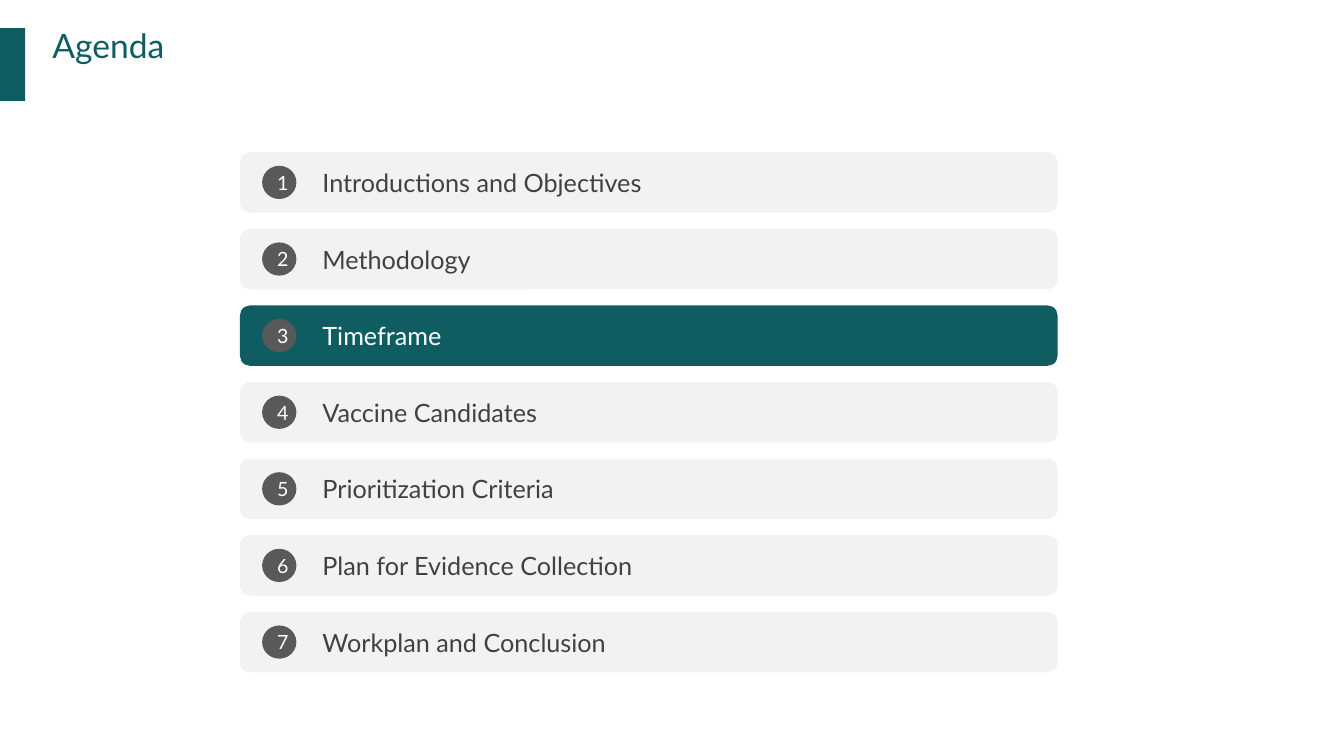
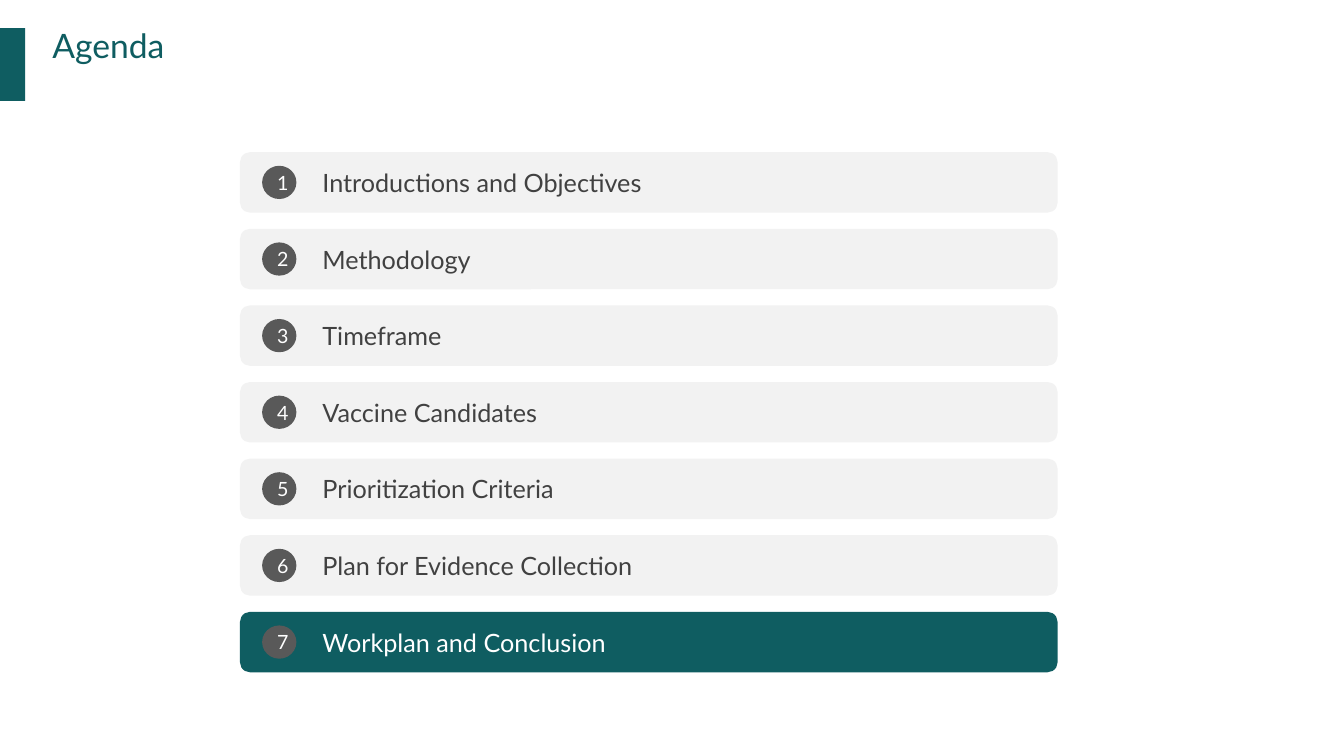
from pptx import Presentation
from pptx.dml.color import RGBColor
from pptx.enum.shapes import MSO_SHAPE
from pptx.enum.text import MSO_ANCHOR, MSO_AUTO_SIZE, PP_ALIGN
from pptx.util import Inches, Pt

RECTANGLE, ROUNDED, OVAL = MSO_SHAPE.RECTANGLE, MSO_SHAPE.ROUNDED_RECTANGLE, MSO_SHAPE.OVAL
TOP, MIDDLE = MSO_ANCHOR.TOP, MSO_ANCHOR.MIDDLE
LEFT, CENTER = PP_ALIGN.LEFT, PP_ALIGN.CENTER
FIXED_SIZE = MSO_AUTO_SIZE.NONE
TITLE_ONLY = 5

TITLE = "Agenda"
TOPICS = [
    "Introductions and Objectives",
    "Methodology",
    "Timeframe",
    "Vaccine Candidates",
    "Prioritization Criteria",
    "Plan for Evidence Collection",
    "Workplan and Conclusion",
]
CURRENT_TOPICS = ["Timeframe", "Workplan and Conclusion"]  # one slide each

FONT = "Lato"
COLORS = {"teal": "0F5D61", "row": "F2F2F2", "badge": "595959",
          "text": "414141", "white": "FFFFFF"}

SLIDE_WIDTH, SLIDE_HEIGHT = 13.33, 7.5
ACCENT_BOX = (-0.01, 0.28, 0.26, 0.72)
TITLE_BOX = (0.52, 0.25, 12.55, 0.8)
ROW_LEFT, ROW_TOP, ROW_WIDTH, ROW_HEIGHT = 2.38, 1.51, 8.11, 0.6
ROW_PITCH = 0.76
BADGE_LEFT, BADGE_WIDTH, BADGE_HEIGHT = 2.6, 0.34, 0.33
LABEL_LEFT, LABEL_WIDTH, LABEL_HEIGHT = 3.1, 6.93, 0.4

TITLE_FRAME = {"margin_left": 0, "margin_top": 0, "margin_right": 0, "margin_bottom": 0,
               "vertical_anchor": TOP, "auto_size": FIXED_SIZE, "word_wrap": True}
BADGE_FRAME = {"vertical_anchor": MIDDLE, "word_wrap": True}
LABEL_FRAME = {"vertical_anchor": TOP, "word_wrap": True}


def rgb(color):
    return RGBColor.from_string(COLORS[color])


def inches(box):
    return [Inches(length) for length in box]


def write(shape, text, size, color, alignment, frame_format):
    frame = shape.text_frame
    for name, value in frame_format.items():
        setattr(frame, name, value)
    paragraph = frame.paragraphs[0]
    paragraph.alignment = alignment
    run = paragraph.add_run()
    run.text = text
    for name, value in {"name": FONT, "size": Pt(size)}.items():
        setattr(run.font, name, value)
    run.font.color.rgb = rgb(color)


def add_filled(slide, kind, box, color):
    shape = slide.shapes.add_shape(kind, *inches(box))
    shape.shadow.inherit = False
    shape.fill.solid()
    shape.fill.fore_color.rgb = rgb(color)
    shape.line.fill.background()
    return shape


def add_titled_slide(presentation, text):
    """Add a slide with the shared accent bar and title."""
    slide = presentation.slides.add_slide(presentation.slide_layouts[TITLE_ONLY])
    add_filled(slide, RECTANGLE, ACCENT_BOX, "teal")
    title = slide.shapes.title
    title.left, title.top, title.width, title.height = inches(TITLE_BOX)
    write(title, text, 24, "teal", LEFT, TITLE_FRAME)
    return slide


def add_topic(slide, index, topic, is_current):
    top = ROW_TOP + index * ROW_PITCH
    middle = top + ROW_HEIGHT / 2
    add_filled(slide, ROUNDED, (ROW_LEFT, top, ROW_WIDTH, ROW_HEIGHT),
               "teal" if is_current else "row")
    badge = add_filled(slide, OVAL, (BADGE_LEFT, middle - BADGE_HEIGHT / 2,
                                     BADGE_WIDTH, BADGE_HEIGHT), "badge")
    write(badge, str(index + 1), 14, "white", CENTER, BADGE_FRAME)
    label = slide.shapes.add_textbox(*inches((LABEL_LEFT, middle - LABEL_HEIGHT / 2,
                                              LABEL_WIDTH, LABEL_HEIGHT)))
    write(label, topic, 18, "white" if is_current else "text", LEFT, LABEL_FRAME)


def main():
    presentation = Presentation()
    presentation.slide_width = Inches(SLIDE_WIDTH)
    presentation.slide_height = Inches(SLIDE_HEIGHT)
    for current in CURRENT_TOPICS:
        slide = add_titled_slide(presentation, TITLE)
        for index, topic in enumerate(TOPICS):
            add_topic(slide, index, topic, topic == current)
    presentation.save("out.pptx")


if __name__ == "__main__":
    main()
